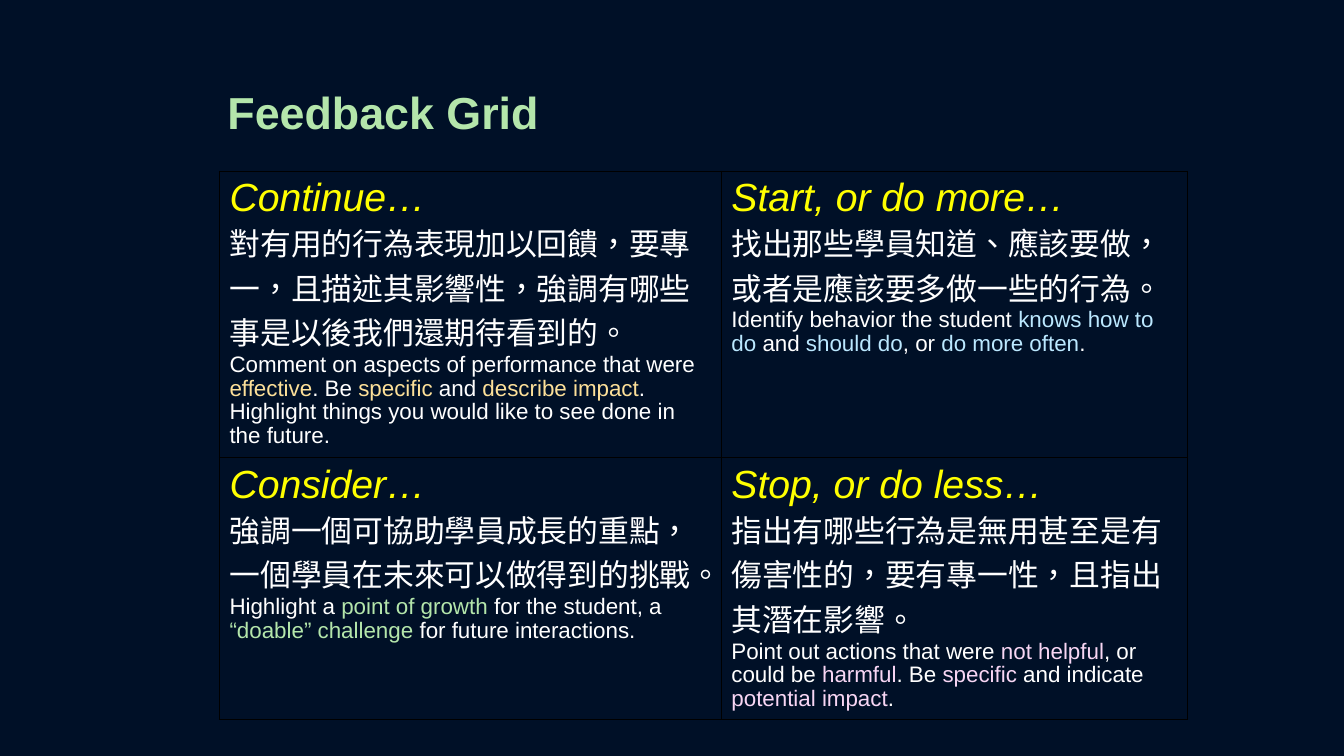
"""Build the Feedback Grid slide: a title over a two by two table of feedback prompts."""
from dataclasses import dataclass

from lxml.etree import SubElement
from pptx import Presentation
from pptx.dml.color import RGBColor
from pptx.enum.text import MSO_ANCHOR as Anchor, PP_ALIGN as Align
from pptx.oxml.ns import qn
from pptx.util import Emu, Pt

EMU_PER_PX = 9525
LATIN_FONT = "Arial"
CHINESE_FONT = "Noto Sans CJK SC"
BACKGROUND = "001027"
WHITE = "FFFFFF"
YELLOW = "FFFF00"
GREEN = "B4E6AB"
BORDER = "000000"
BORDER_SIDES = ("a:lnL", "a:lnR", "a:lnT", "a:lnB")
COLUMN_WIDTHS = (478, 444)
ROW_HEIGHTS = (273, 249)


@dataclass(frozen=True)
class Prompt:
    """One quadrant; asterisks in the English text enclose highlighted words."""

    heading: str
    chinese: str
    english: str
    highlight: str


PROMPTS = (
    (
        Prompt(
            "Continue…",
            "對有用的行為表現加以回饋，要專一，且描述其影響性，強調有哪些事是以後我們還期待看到的。",
            "Comment on aspects of performance that were *effective*. Be *specific* and "
            "*describe impact*. Highlight things you would like to see done in the future.",
            "FDE099",
        ),
        Prompt(
            "Start, or do more…",
            "找出那些學員知道、應該要做，或者是應該要多做一些的行為。",
            "Identify behavior the student *knows how to do *and *should do*, or *do more often*.",
            "BBE8FF",
        ),
    ),
    (
        Prompt(
            "Consider…",
            "強調一個可協助學員成長的重點，一個學員在未來可以做得到的挑戰。",
            "Highlight a *point of growth *for the student, a "
            "*“doable” challenge *for future interactions.",
            GREEN,
        ),
        Prompt(
            "Stop, or do less…",
            "指出有哪些行為是無用甚至是有傷害性的，要有專一性，且指出其潛在影響。",
            "Point out actions that were *not helpful*, or could be *harmful*. "
            "Be *specific* and indicate *potential impact*.",
            "F8D6F4",
        ),
    ),
)


def px(length: int) -> Emu:
    """Turn pixels into EMU."""
    return Emu(length * EMU_PER_PX)


def colour(value: str) -> RGBColor:
    """Turn a hex string into a colour."""
    return RGBColor.from_string(value)


def add_text(para, text: str, *, size: int, color: str = WHITE, font: str = LATIN_FONT,
             bold: bool = False, italic: bool = False, language: str = "en-US") -> None:
    """Append one formatted span to a paragraph."""
    span = para.add_run()
    span.text = text
    span.font.size = Pt(size)
    span.font.name = font
    span.font.bold = bold
    span.font.italic = italic
    span.font.color.rgb = colour(color)
    properties = span.font._element
    properties.set("lang", language)
    SubElement(properties, qn("a:ea")).set("typeface", font)


def draw_borders(cell) -> None:
    """Put a thin line on every side of a cell."""
    properties = cell._tc.get_or_add_tcPr()
    for side in BORDER_SIDES:
        line = SubElement(properties, qn(side), w=str(Pt(1)))
        fill = SubElement(line, qn("a:solidFill"))
        SubElement(fill, qn("a:srgbClr"), val=BORDER)


def fill_cell(cell, prompt: Prompt) -> None:
    """Write one prompt into a cell."""
    draw_borders(cell)
    cell.fill.background()
    frame = cell.text_frame
    add_text(frame.paragraphs[0], prompt.heading, size=28, color=YELLOW, italic=True)
    add_text(frame.add_paragraph(), prompt.chinese, size=22, font=CHINESE_FONT, language="zh-TW")
    para = frame.add_paragraph()
    para.line_spacing = 0.95
    for index, part in enumerate(prompt.english.split("*")):
        add_text(para, part, size=16, color=prompt.highlight if index % 2 else WHITE)


def add_title(page) -> None:
    """Place and format the title placeholder."""
    title = page.shapes.title
    title.left, title.top, title.width, title.height = map(px, (207, 29, 863, 108))
    frame = title.text_frame
    frame.vertical_anchor = Anchor.BOTTOM
    frame.word_wrap = True
    para = frame.paragraphs[0]
    para.alignment = Align.LEFT
    add_text(para, "Feedback Grid", size=32, color=GREEN, bold=True)


def add_grid(page) -> None:
    """Draw the table of prompts."""
    table = page.shapes.add_table(
        len(ROW_HEIGHTS), len(COLUMN_WIDTHS), px(209), px(163),
        px(sum(COLUMN_WIDTHS)), px(sum(ROW_HEIGHTS)),
    ).table
    table.first_row = False
    table.horz_banding = False
    for column, width in zip(table.columns, COLUMN_WIDTHS):
        column.width = px(width)
    for row, height, prompts in zip(table.rows, ROW_HEIGHTS, PROMPTS):
        row.height = px(height)
        for cell, prompt in zip(row.cells, prompts):
            fill_cell(cell, prompt)


def main() -> None:
    """Build and save the deck."""
    deck = Presentation()
    deck.slide_width, deck.slide_height = px(1280), px(720)
    page = deck.slides.add_slide(deck.slide_layouts.get_by_name("Title Only"))
    page.background.fill.solid()
    page.background.fill.fore_color.rgb = colour(BACKGROUND)
    add_grid(page)
    add_title(page)
    deck.save("out.pptx")


if __name__ == "__main__":
    main()
